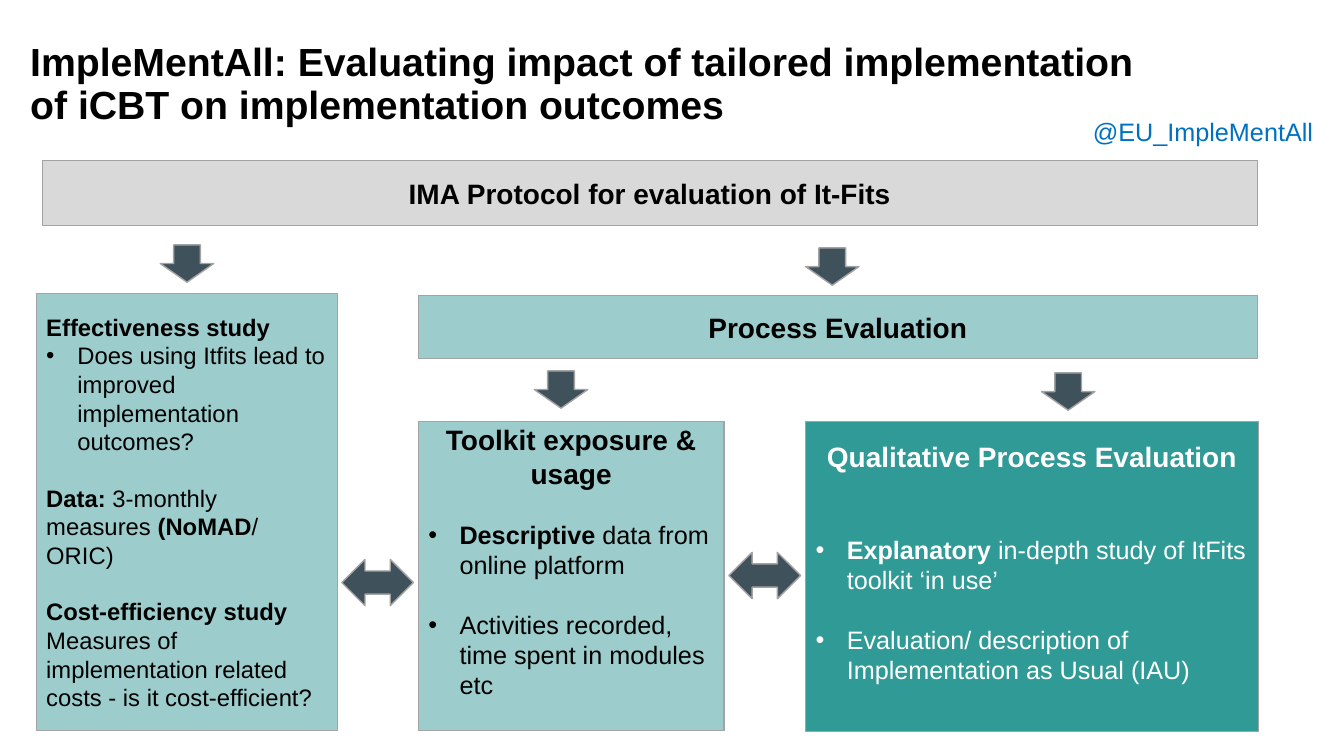
from pptx import Presentation
from pptx.dml.color import RGBColor
from pptx.enum.shapes import MSO_SHAPE
from pptx.enum.text import MSO_ANCHOR, MSO_AUTO_SIZE, PP_ALIGN
from pptx.oxml.ns import qn
from pptx.util import Inches, Pt
from lxml import etree

RECT, DOWN, BOTH_WAYS = MSO_SHAPE.RECTANGLE, MSO_SHAPE.DOWN_ARROW, MSO_SHAPE.LEFT_RIGHT_ARROW
LEFT, CENTER = PP_ALIGN.LEFT, PP_ALIGN.CENTER
TOP, MIDDLE = MSO_ANCHOR.TOP, MSO_ANCHOR.MIDDLE
NO_FIT = MSO_AUTO_SIZE.NONE

COLORS = {
    "black": "000000", "white": "FFFFFF", "grey": "D9D9D9", "border": "A3A3A3",
    "mint": "9CCDCC", "teal": "309A96", "slate": "3F525B", "blue": "0070C0",
}


def rgb(name):
    return RGBColor.from_string(COLORS[name])


def para(*runs, size=18, bold=False, align=LEFT, bullet=False, before=0):
    """Describe a paragraph; a run is a string or a (string, bold) pair."""
    return {"runs": runs, "size": size, "bold": bold, "align": align,
            "bullet": bullet, "before": before}


def heading(text):
    return para(text, size=20, bold=True, align=CENTER)


class SlideBuilder:
    font = "Arial"

    def __init__(self, prs):
        self.slide = prs.slides.add_slide(prs.slide_layouts[5])

    def fill_text(self, frame, paragraphs, color="black", anchor=MIDDLE):
        frame.word_wrap = True
        frame.vertical_anchor = anchor
        for i, item in enumerate(paragraphs):
            p = frame.paragraphs[0] if i == 0 else frame.add_paragraph()
            p.alignment = item["align"]
            if item["before"]:
                p.space_before = Pt(item["before"])
            if item["bullet"]:
                self.add_bullet(p)
            p.font.name, p.font.size = self.font, Pt(item["size"])
            p.font.color.rgb = rgb(color)
            mixed = any(isinstance(run, tuple) for run in item["runs"])
            if not mixed:
                p.font.bold = item["bold"]
            for part in item["runs"]:
                run = p.add_run()
                if mixed:
                    run.text, run.font.bold = part
                else:
                    run.text = part

    def add_bullet(self, p):
        props = p._p.get_or_add_pPr()
        props.set("marL", str(Inches(0.31)))
        props.set("indent", str(-Inches(0.31)))
        etree.SubElement(props, qn("a:buFont")).set("typeface", self.font)
        etree.SubElement(props, qn("a:buChar")).set("char", "•")

    def title(self, text, left, top, width, height):
        title = self.slide.shapes.title
        title.left, title.top = Inches(left), Inches(top)
        title.width, title.height = Inches(width), Inches(height)
        title.text_frame.auto_size = NO_FIT
        self.fill_text(title.text_frame, [para(text, size=28, bold=True)])
        title.text_frame.paragraphs[0].line_spacing = 0.9

    def shape(self, kind, left, top, width, height, fill):
        shape = self.slide.shapes.add_shape(
            kind, Inches(left), Inches(top), Inches(width), Inches(height))
        shape.shadow.inherit = False
        shape.fill.solid()
        shape.fill.fore_color.rgb = rgb(fill)
        shape.line.color.rgb = rgb("border")
        shape.line.width = Pt(1)
        return shape

    def box(self, left, top, width, height, fill, paragraphs, color="black", bottom=0.05):
        frame = self.shape(RECT, left, top, width, height, fill).text_frame
        frame.margin_bottom = Inches(bottom)
        self.fill_text(frame, paragraphs, color)

    def label(self, text, left, top, width, height, color):
        label = self.slide.shapes.add_textbox(
            Inches(left), Inches(top), Inches(width), Inches(height))
        self.fill_text(label.text_frame, [para(text)], color, TOP)


def main():
    prs = Presentation()
    prs.slide_width, prs.slide_height = Inches(13.33), Inches(7.5)
    page = SlideBuilder(prs)

    page.title("ImpleMentAll: Evaluating impact of tailored implementation of iCBT "
               "on implementation outcomes", 0.2, 0.12, 11.5, 1.45)

    # Protocol and process evaluation bars
    page.box(0.42, 1.59, 12.05, 0.65, "grey", [heading("IMA Protocol for evaluation of It-Fits")])
    page.box(4.15, 2.93, 8.32, 0.63, "mint", [heading("Process Evaluation")])

    # Effectiveness and cost-efficiency
    page.box(0.36, 2.91, 2.99, 4.34, "mint", [
        para("Effectiveness study", size=17, bold=True),
        para("Does using Itfits lead to improved implementation outcomes?", size=17, bullet=True),
        para(("Data: ", True), ("3-monthly measures ", False), ("(NoMAD", True),
             ("/ ORIC)", False), size=17, before=20),
        para("Cost-efficiency study", size=17, bold=True, before=20),
        para("Measures of implementation related costs - is it cost-efficient?", size=17),
    ])

    # Toolkit usage
    page.box(4.15, 4.18, 3.03, 3.07, "mint", [
        heading("Toolkit exposure & usage"),
        para(("Descriptive", True), (" data from online platform", False),
             bullet=True, before=21),
        para("Activities recorded, time spent in modules etc", bullet=True, before=21),
    ], bottom=0.34)

    # Qualitative evaluation
    page.box(7.99, 4.18, 4.49, 3.08, "teal", [
        heading("Qualitative Process Evaluation"),
        para(("Explanatory ", True), ("in-depth study of ItFits toolkit ‘in use’", False),
             bullet=True, before=44),
        para("Evaluation/ description of Implementation as Usual (IAU)", bullet=True, before=21),
    ], color="white", bottom=0.34)

    # Arrows between levels and between studies
    for left, top in [(7.99, 2.46), (1.59, 2.43), (10.33, 3.7), (5.3, 3.68)]:
        page.shape(DOWN, left, top, 0.53, 0.37, "slate")
    for left, top in [(7.23, 5.48), (3.39, 5.55)]:
        page.shape(BOTH_WAYS, left, top, 0.71, 0.46, "slate")

    # Project handle
    page.label("@EU_ImpleMentAll", 10.74, 1.1, 2.39, 1.01, "blue")

    prs.save("out.pptx")


if __name__ == "__main__":
    main()
